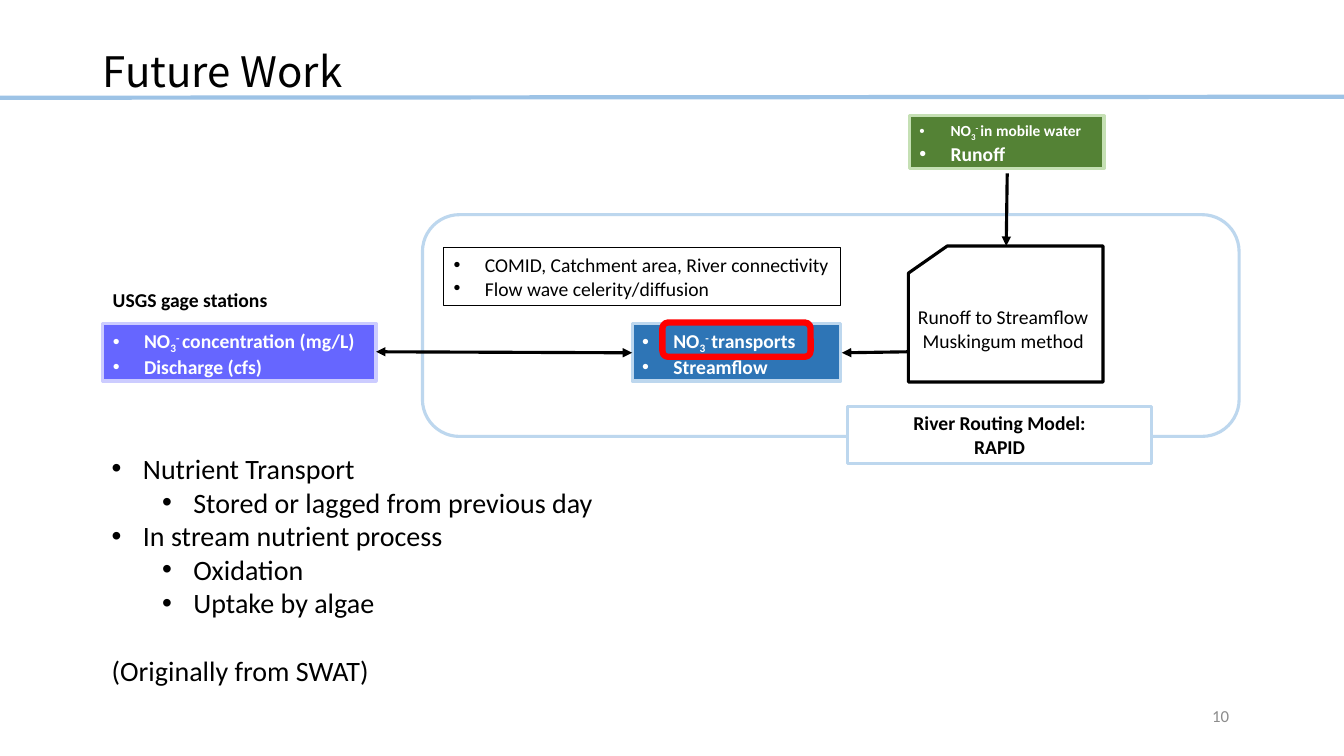
import pptx
import pptx.util
import pptx.dml.color
import pptx.enum.shapes
import pptx.enum.text
import lxml.etree

Inches, Pt = pptx.util.Inches, pptx.util.Pt
SHAPE = pptx.enum.shapes.MSO_SHAPE
ALIGN = pptx.enum.text.PP_ALIGN
ANCHOR = pptx.enum.text.MSO_ANCHOR

COLORS = {
    "black": "000000", "white": "FFFFFF", "gray": "8C8C8C", "red": "FF0000",
    "rule": "9DC3E6", "pale_blue": "BDD7EE", "blue": "2E75B6",
    "violet": "6666FF", "pale_violet": "CCCCFF",
    "green": "548235", "pale_green": "C5E0B4",
}

NITRATE = [("NO", 0), ("3", -25), ("- ", 30)]

FRAMES = [
    (SHAPE.ROUNDED_RECTANGLE, (4.19, 2.13, 8.1, 2.2), "pale_blue", 2.25),
    (SHAPE.FLOWCHART_CARD, (9.01, 2.44, 1.93, 1.35), "black", 2.25),
]
HIGHLIGHT = (SHAPE.ROUNDED_RECTANGLE, (6.57, 3.2, 1.47, 0.34), "red", 4.5)

BOXES = [
    dict(at=(1.02, 3.21, 2.71, 0.57), fill="violet", line="pale_violet", color="white", bold=True, bullets=True,
         lines=[NITRATE + [("concentration (mg/L)", 0)], "Discharge (cfs)"]),
    dict(at=(8.41, 4.03, 3.01, 0.57), fill="white", line="pale_blue", bold=True, align=ALIGN.CENTER,
         lines=["River Routing Model:", "RAPID"]),
    dict(at=(6.27, 3.21, 2.07, 0.57), fill="blue", line="pale_blue", color="white", bold=True, bullets=True,
         lines=[NITRATE + [("transports", 0)], "Streamflow"]),
    dict(at=(4.4, 2.46, 3.94, 0.57), line="black", weight=0.75, bullets=True,
         lines=["COMID, Catchment area, River connectivity", "Flow wave celerity/diffusion"]),
    dict(at=(9.02, 1.15, 1.93, 0.52), fill="green", line="pale_green", color="white", bold=True, bullets=True,
         sizes=[11, 14], lines=[NITRATE + [("in mobile water", 0)], "Runoff"]),
]

LABELS = [
    dict(at=(9.29, 6.9, 3, 0.4), lines=["10"], sizes=[12], color="gray", align=ALIGN.RIGHT, anchor=ANCHOR.MIDDLE),
    dict(at=(0.92, 0.01, 11.5, 1.45), lines=["Future Work"], sizes=[30], font="Noto Sans CJK SC",
         anchor=ANCHOR.MIDDLE, spacing=0.9),
    dict(at=(1.02, 2.81, 2.03, 0.34), lines=["USGS gage stations"], bold=True),
    dict(at=(8.94, 2.98, 2.02, 0.57), lines=["Runoff to Streamflow", "Muskingum method"], align=ALIGN.CENTER),
]

PLANS_AT = (1.01, 4.43, 6.04, 2.46)
PLANS = [
    ("Nutrient Transport", 0),
    ("Stored or lagged from previous day", 1),
    ("In stream nutrient process", 0),
    ("Oxidation", 1),
    ("Uptake by algae", 1),
    ("(Originally from SWAT)", None),
]

RULE = ((0, 0.97), (13.33, 0.96), "rule", 3, [])
ARROWS = [
    ((9.99, 1.72), (9.98, 2.44), "black", 2.25, ["tailEnd"]),
    ((9.02, 3.49), (8.35, 3.5), "black", 2.25, ["tailEnd"]),
    ((3.73, 3.49), (6.27, 3.5), "black", 2.25, ["headEnd", "tailEnd"]),
]


def rgb(name):
    return pptx.dml.color.RGBColor.from_string(COLORS[name])


def add_xml(parent, tag, **attributes):
    return lxml.etree.SubElement(parent, pptx.oxml.ns.qn(tag), attributes)


def add_bullet(paragraph, level):
    properties = paragraph._p.get_or_add_pPr()
    properties.set("marL", str(Inches(0.31 + 0.5 * level)))
    properties.set("indent", str(-Inches(0.31)))
    add_xml(properties, "a:buFont", typeface="Arial")
    add_xml(properties, "a:buChar", char="•")
    paragraph.level = level


def write(frame, lines, sizes=(14,), color="black", bold=False, bullets=False, levels=None,
          align=ALIGN.LEFT, anchor=ANCHOR.TOP, font="Calibri", spacing=None):
    frame.word_wrap = True
    frame.vertical_anchor = anchor
    if levels is None:
        levels = [0 if bullets else None] * len(lines)
    for i, (line, level) in enumerate(zip(lines, levels)):
        paragraph = frame.paragraphs[0] if i == 0 else frame.add_paragraph()
        paragraph.alignment = align
        if spacing:
            paragraph.line_spacing = spacing
        if level is not None:
            add_bullet(paragraph, level)
        for text, baseline in [(line, 0)] if isinstance(line, str) else line:
            run = paragraph.add_run()
            run.text = text
            run.font.name = font
            run.font.size = Pt(sizes[min(i, len(sizes) - 1)])
            run.font.bold = bold
            run.font.color.rgb = rgb(color)
            properties = run._r.get_or_add_rPr()
            add_xml(properties, "a:ea", typeface=font)
            if baseline:
                properties.set("baseline", str(baseline * 1000))


def add_outline(slide, kind, at, line, weight, fill=None):
    outline = slide.shapes.add_shape(kind, *map(Inches, at))
    outline.shadow.inherit = False
    outline.line.color.rgb = rgb(line)
    outline.line.width = Pt(weight)
    if fill:
        outline.fill.solid()
        outline.fill.fore_color.rgb = rgb(fill)
    else:
        outline.fill.background()
    return outline


def add_box(slide, at, line, fill=None, weight=2.25, **text):
    write(add_outline(slide, SHAPE.RECTANGLE, at, line, weight, fill).text_frame, **text)


def add_label(slide, at, **text):
    label = slide.shapes.add_textbox(*map(Inches, at))
    write(label.text_frame, **text)
    return label


def add_line(slide, start, end, color, weight, heads):
    line = slide.shapes.add_connector(pptx.enum.shapes.MSO_CONNECTOR.STRAIGHT, *map(Inches, start + end))
    line.line.color.rgb = rgb(color)
    line.line.width = Pt(weight)
    for head in heads:
        add_xml(line.line._get_or_add_ln(), "a:" + head, type="triangle")
    add_xml(line._element.spPr, "a:effectLst")


def main():
    deck = pptx.Presentation()
    deck.slide_width, deck.slide_height = Inches(13.33), Inches(7.5)
    slide = deck.slides.add_slide(deck.slide_layouts[6])
    add_line(slide, *RULE)
    for frame in FRAMES:
        add_outline(slide, *frame)
    for box in BOXES:
        add_box(slide, **box)
    for arrow in ARROWS:
        add_line(slide, *arrow)
    for label in LABELS:
        add_label(slide, **label)
    add_outline(slide, *HIGHLIGHT)
    lines, levels = zip(*PLANS)
    plans = add_label(slide, PLANS_AT, lines=lines, levels=levels, sizes=[20])
    plans.text_frame.paragraphs[-1].space_before = Pt(24)
    deck.save("out.pptx")


if __name__ == "__main__":
    main()
